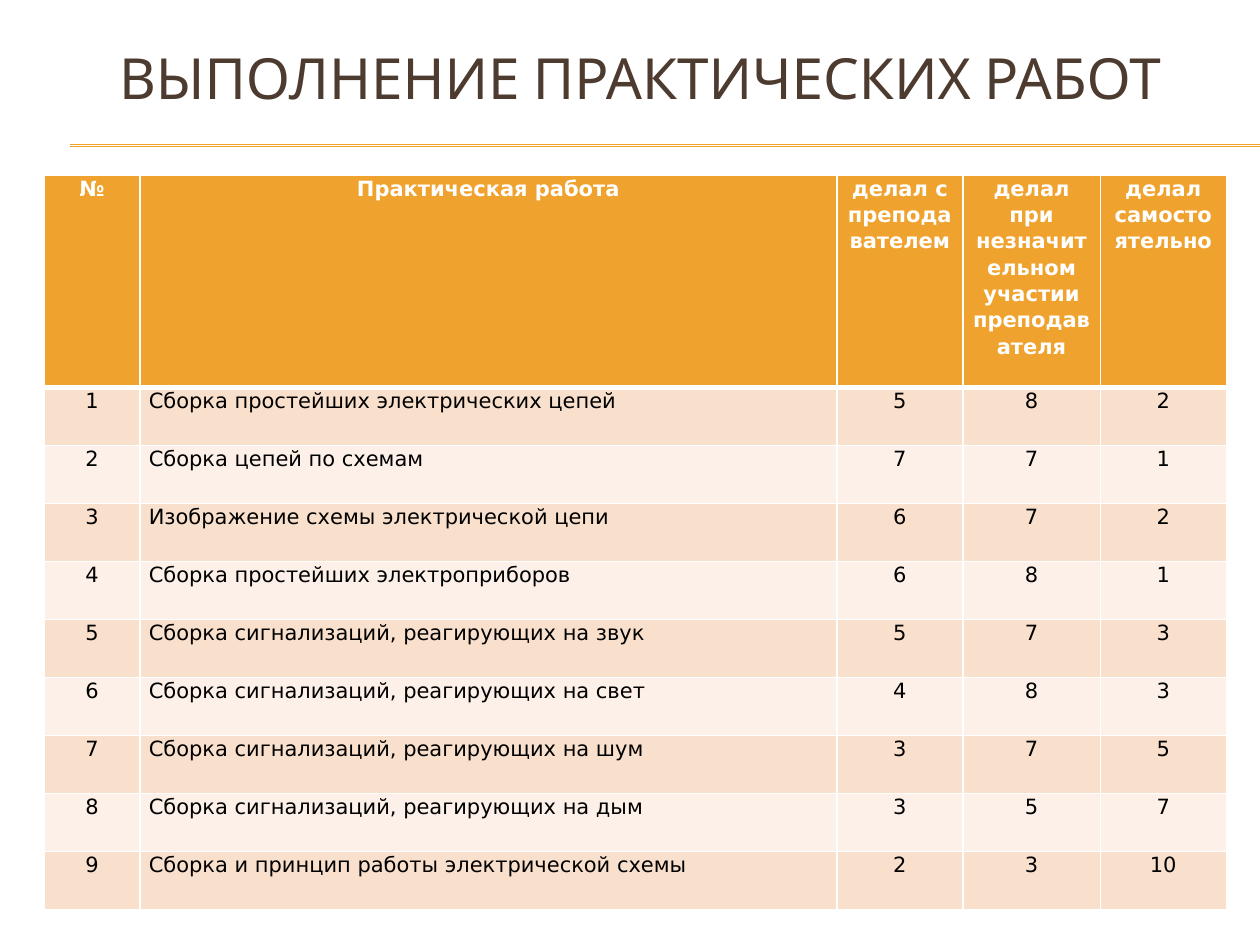
"""Build a slide with a table of completed practical works."""
from lxml import etree
from pptx import Presentation
from pptx.dml.color import RGBColor
from pptx.enum.shapes import MSO_CONNECTOR
from pptx.enum.text import MSO_ANCHOR, PP_ALIGN
from pptx.oxml.ns import qn
from pptx.util import Cm, Pt

STRAIGHT = MSO_CONNECTOR.STRAIGHT
MIDDLE = MSO_ANCHOR.MIDDLE
CENTER = PP_ALIGN.CENTER
JUSTIFY = PP_ALIGN.JUSTIFY

WHITE = RGBColor(0xFF, 0xFF, 0xFF)
BLACK = RGBColor(0x00, 0x00, 0x00)
BROWN = RGBColor(0x4E, 0x3B, 0x30)
ORANGE = RGBColor(0xF0, 0xA2, 0x2E)
PEACH = RGBColor(0xF9, 0xE0, 0xCD)
CREAM = RGBColor(0xFC, 0xF0, 0xE8)

HEADINGS = (
    "№",
    "Практическая работа",
    "делал с преподавателем",
    "делал при незначительном участии преподавателя",
    "делал самостоятельно",
)
WORKS = (
    ("Сборка простейших электрических цепей", 5, 8, 2),
    ("Сборка цепей по схемам", 7, 7, 1),
    ("Изображение схемы электрической цепи", 6, 7, 2),
    ("Сборка простейших электроприборов", 6, 8, 1),
    ("Сборка сигнализаций, реагирующих на звук", 5, 7, 3),
    ("Сборка сигнализаций, реагирующих на свет", 4, 8, 3),
    ("Сборка сигнализаций, реагирующих на шум", 3, 7, 5),
    ("Сборка сигнализаций, реагирующих на дым", 3, 5, 7),
    ("Сборка и принцип работы электрической схемы", 2, 3, 10),
)
COLUMN_WIDTHS = (1.93, 14.05, 2.54, 2.77, 2.54)
HEADER_HEIGHT = 4.28
WORK_HEIGHT = 1.17


def write(frame, text, font="DejaVu Sans", size=12, color=BLACK, bold=False,
          align=CENTER, spacing=1.07):
    frame.word_wrap = True
    paragraph = frame.paragraphs[0]
    paragraph.alignment = align
    paragraph.line_spacing = spacing
    run = paragraph.add_run()
    run.text = text
    run.font.name = font
    run.font.size = Pt(size)
    run.font.bold = bold
    run.font.color.rgb = color


def add_border(cell, side, points):
    line = etree.SubElement(cell._tc.get_or_add_tcPr(), qn(f"a:ln{side}"), w=str(Pt(points)))
    fill = etree.SubElement(line, qn("a:solidFill"))
    etree.SubElement(fill, qn("a:srgbClr"), val=str(WHITE))


presentation = Presentation()
presentation.slide_width = Cm(25.4)
presentation.slide_height = Cm(19.05)
slide = presentation.slides.add_slide(presentation.slide_layouts[6])

for height in (2.92, 2.95):
    rule = slide.shapes.add_connector(STRAIGHT, Cm(1.42), Cm(height), Cm(25.4), Cm(height))
    rule.line.color.rgb = ORANGE
    rule.line.width = Pt(0.75)
    etree.SubElement(rule._element.spPr, qn("a:effectLst"))

title = slide.shapes.add_textbox(Cm(0.84), Cm(0.74), Cm(24.13), Cm(1.6))
title.text_frame.vertical_anchor = MIDDLE
write(title.text_frame, "ВЫПОЛНЕНИЕ ПРАКТИЧЕСКИХ РАБОТ",
      font="Karla", size=32.4, color=BROWN, spacing=1)

rows = [HEADINGS] + [(number, *work) for number, work in enumerate(WORKS, 1)]
results = slide.shapes.add_table(
    len(rows), len(HEADINGS), Cm(0.89), Cm(3.53),
    Cm(sum(COLUMN_WIDTHS)), Cm(HEADER_HEIGHT + WORK_HEIGHT * len(WORKS))).table
for column, width in zip(results.columns, COLUMN_WIDTHS):
    column.width = Cm(width)

for row_index, row in enumerate(rows):
    is_header = row_index == 0
    results.rows[row_index].height = Cm(HEADER_HEIGHT if is_header else WORK_HEIGHT)
    background = ORANGE if is_header else PEACH if row_index % 2 else CREAM
    for column_index, value in enumerate(row):
        cell = results.cell(row_index, column_index)
        cell.margin_left = cell.margin_right = Cm(0.18)
        cell.margin_top = cell.margin_bottom = 0
        add_border(cell, "L", 1)
        add_border(cell, "R", 1)
        add_border(cell, "T", 3 if row_index == 1 else 1)
        add_border(cell, "B", 3 if is_header else 1)
        cell.fill.solid()
        cell.fill.fore_color.rgb = background
        write(cell.text_frame, str(value), color=WHITE if is_header else BLACK, bold=is_header,
              align=JUSTIFY if column_index == 1 and not is_header else CENTER)

presentation.save("out.pptx")
